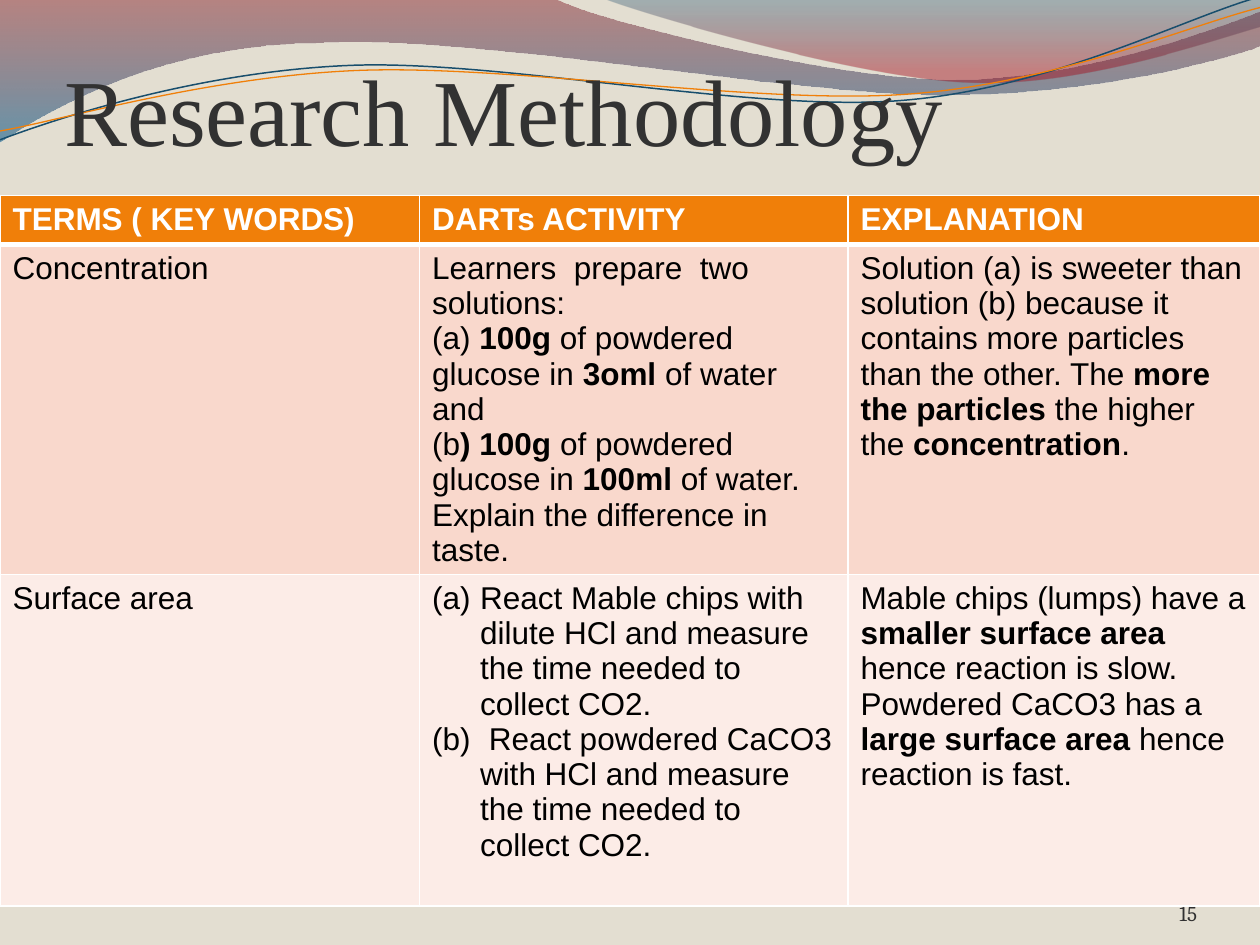
"""Build the Research Methodology slide with its wave header and terms table."""
from dataclasses import dataclass

from lxml.etree import SubElement
from pptx import Presentation
from pptx.dml.color import RGBColor as Color
from pptx.enum.text import MSO_ANCHOR as Anchor, MSO_AUTO_SIZE as AutoSize, PP_ALIGN as Align
from pptx.oxml.ns import qn
from pptx.util import Inches, Pt


@dataclass(frozen=True)
class Theme:
    background: str = "E3DED1"
    title: str = "323232"
    number: str = "303030"
    white: str = "FFFFFF"
    black: str = "000000"
    orange: str = "F07F09"
    navy: str = "184E6D"
    row_fills: tuple = ("F07F09", "F9D8CC", "FCECE7")
    title_size: int = 54
    table_size: int = 18
    number_size: int = 12


theme = Theme()


def add_run(paragraph, text, font, size, color, bold=False):
    run = paragraph.add_run()
    run.text = text
    run.font.name = font
    run.font.size = Pt(size)
    run.font.bold = bold
    run.font.color.rgb = Color.from_string(color)


def add_wave(shapes, start, segments, closed):
    points = [(Inches(x), Inches(y)) for segment in segments
              for x, y in zip(segment[::2], segment[1::2])]
    builder = shapes.build_freeform(Inches(start[0]), Inches(start[1]))
    builder.add_line_segments(points, close=closed)
    shape = builder.convert_to_shape()
    shape.shadow.inherit = False
    lines = iter(list(shape.element.iter(qn("a:lnTo"))))
    for segment in segments:
        line = next(lines)
        if len(segment) == 6:
            line.tag = qn("a:cubicBezTo")
            for control in (next(lines), next(lines)):
                line.append(control[0])
                control.getparent().remove(control)
    return shape


presentation = Presentation()
presentation.slide_width = Inches(10)
presentation.slide_height = Inches(7.5)
slide = presentation.slides.add_slide(presentation.slide_layouts[5])
slide.background.fill.solid()
slide.background.fill.fore_color.rgb = Color.from_string(theme.background)

bands = [
    ((0, -0.01),
     [(4.4, -0.01), (4.76, 0.17, 6.64, 0.63, 7.58, 0.63), (8.53, 0.63, 9.58, 0.26, 10, 0.09),
      (10.01, 0.36), (9.83, 0.44, 8.7, 0.76, 7.46, 0.75), (6.22, 0.75, 3.82, 0.28, 2.57, 0.34),
      (1.29, 0.35, 0.46, 0.83, -0.01, 1.13), (0, -0.01)],
     [(0, "7E1621", 45), (1, "005689", 55)]),
    ((4.79, -0.01),
     [(5.09, 0.11, 6.82, 0.62, 7.69, 0.65), (8.56, 0.69, 9.61, 0.32, 10, 0.21), (10, 0),
      (4.79, -0.01)],
     [(0, "094467", 30), (0.8, "A10F1F", 45)]),
]
for start, segments, stops in bands:
    band = add_wave(slide.shapes, start, segments, True)
    band.line.fill.background()
    band.fill.gradient()
    band.fill.gradient_angle = 270
    for stop, (position, color, opacity) in zip(band.fill.gradient_stops, stops):
        stop.position = position
        stop.color.rgb = Color.from_string(color)
    for element, (position, color, opacity) in zip(band.element.iter(qn("a:srgbClr")), stops):
        SubElement(element, qn("a:alpha"), val=str(opacity * 1000))

strands = [
    ((0, 1.11),
     [(0.48, 0.93, 1.58, 0.57, 2.77, 0.52), (3.95, 0.47, 5.93, 0.89, 7.13, 0.8),
      (8.33, 0.71, 9.38, 0.15, 9.98, -0.02)], theme.navy, 0.85),
    ((0, 1.04),
     [(0.47, 0.96, 1.64, 0.61, 2.83, 0.56), (4.03, 0.51, 5.97, 0.83, 7.17, 0.75),
      (8.36, 0.67, 9.41, 0.21, 10, 0.06)], theme.orange, 0.75),
]
for start, segments, color, width in strands:
    strand = add_wave(slide.shapes, start, segments, False)
    strand.fill.background()
    strand.line.color.rgb = Color.from_string(color)
    strand.line.width = Pt(width)

title = slide.shapes.title
title.left, title.top, title.width, title.height = Inches(0.51), Inches(0.36), Inches(9), Inches(0.95)
frame = title.text_frame
frame.auto_size = AutoSize.NONE
frame.vertical_anchor = Anchor.BOTTOM
frame.margin_left = frame.margin_right = frame.margin_bottom = 0
frame.margin_top = Inches(0.05)
frame.paragraphs[0].alignment = Align.LEFT
add_run(frame.paragraphs[0], "Research Methodology", "Times New Roman", theme.title_size, theme.title)
slide.shapes.element.append(title.element)

rows = [
    [[[("TERMS ( KEY WORDS)", True)]], [[("DARTs ACTIVITY", True)]], [[("EXPLANATION", True)]]],
    [
        [[("Concentration", False)]],
        [
            [("Learners  prepare  two solutions:", False)],
            [("(a) ", False), ("100g", True), (" of powdered glucose in ", False),
             ("3oml", True), (" of water and", False)],
            [("(b", False), (") 100g ", True), ("of powdered glucose in", False),
             (" 100ml ", True), ("of water.", False)],
            [("Explain the difference in taste.", False)],
        ],
        [[("Solution (a) is sweeter than solution (b) because it contains more particles "
           "than the other. The ", False), ("more the particles ", True),
          ("the higher the ", False), ("concentration", True), (".", False)]],
    ],
    [
        [[("Surface area", False)]],
        [
            [("React Mable chips with dilute HCl and measure the time needed to collect CO2.", False)],
            [(" React powdered CaCO3 with HCl and measure the time needed to collect CO2.", False)],
        ],
        [
            [("Mable chips (lumps) have a ", False), ("smaller surface area ", True),
             ("hence reaction is slow.", False)],
            [("Powdered CaCO3 has a ", False), ("large surface area ", True),
             ("hence reaction is fast.", False)],
        ],
    ],
]
numbered_cell = (2, 1)
table = slide.shapes.add_table(3, 3, Inches(0), Inches(1.55), Inches(10), Inches(5.53)).table
for column, width in zip(table.columns, (3.33, 3.4, 3.27)):
    column.width = Inches(width)
for row, height in zip(table.rows, (0.39, 2.45, 2.63)):
    row.height = Inches(height)

for row_index, row in enumerate(rows):
    is_header = row_index == 0
    text_color = theme.white if is_header else theme.black
    for column_index, paragraphs in enumerate(row):
        cell = table.cell(row_index, column_index)
        if is_header:
            properties = cell._tc.get_or_add_tcPr()
            for side, width in (("lnL", 1), ("lnR", 1), ("lnT", 1), ("lnB", 3)):
                border = SubElement(properties, qn(f"a:{side}"), w=str(Pt(width)))
                SubElement(SubElement(border, qn("a:solidFill")), qn("a:srgbClr"), val=theme.white)
        cell.fill.solid()
        cell.fill.fore_color.rgb = Color.from_string(theme.row_fills[row_index])
        for index, runs in enumerate(paragraphs):
            frame = cell.text_frame
            paragraph = frame.add_paragraph() if index else frame.paragraphs[0]
            if (row_index, column_index) == numbered_cell:
                settings = paragraph._p.get_or_add_pPr()
                settings.set("marL", str(Inches(0.38)))
                settings.set("indent", str(Inches(-0.38)))
                SubElement(settings, qn("a:buFont"), typeface="+mj-lt")
                SubElement(settings, qn("a:buAutoNum"), type="alphaLcParenBoth")
            for text, bold in runs:
                add_run(paragraph, text, "Arial", theme.table_size, text_color, bold)

number_box = slide.shapes.add_textbox(Inches(8.67), Inches(6.95), Inches(0.83), Inches(0.4))
frame = number_box.text_frame
frame.word_wrap = True
frame.vertical_anchor = Anchor.BOTTOM
frame.margin_left = frame.margin_right = frame.margin_top = frame.margin_bottom = 0
frame.paragraphs[0].alignment = Align.RIGHT
add_run(frame.paragraphs[0], "15", "Cambria", theme.number_size, theme.number)

presentation.save("out.pptx")
